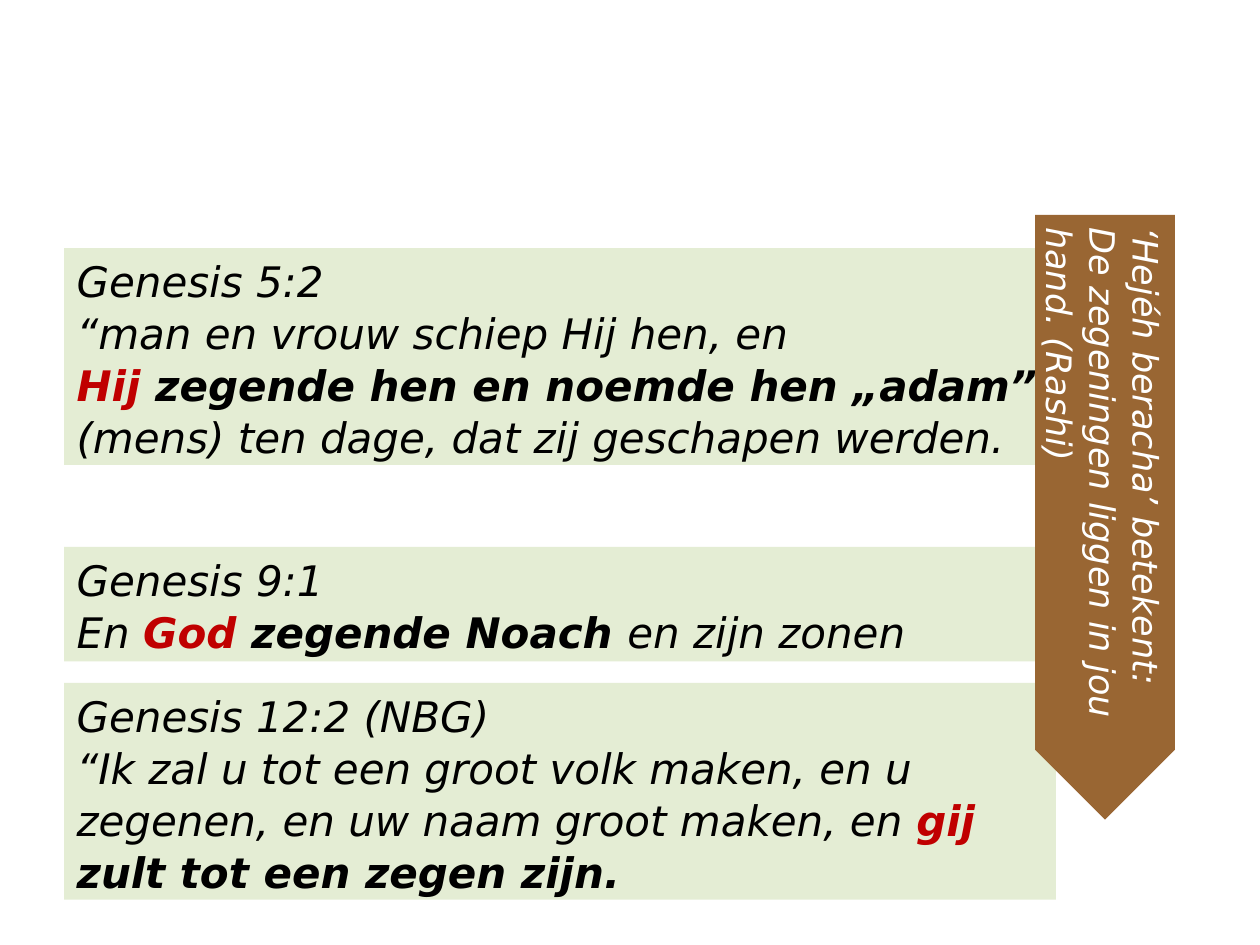
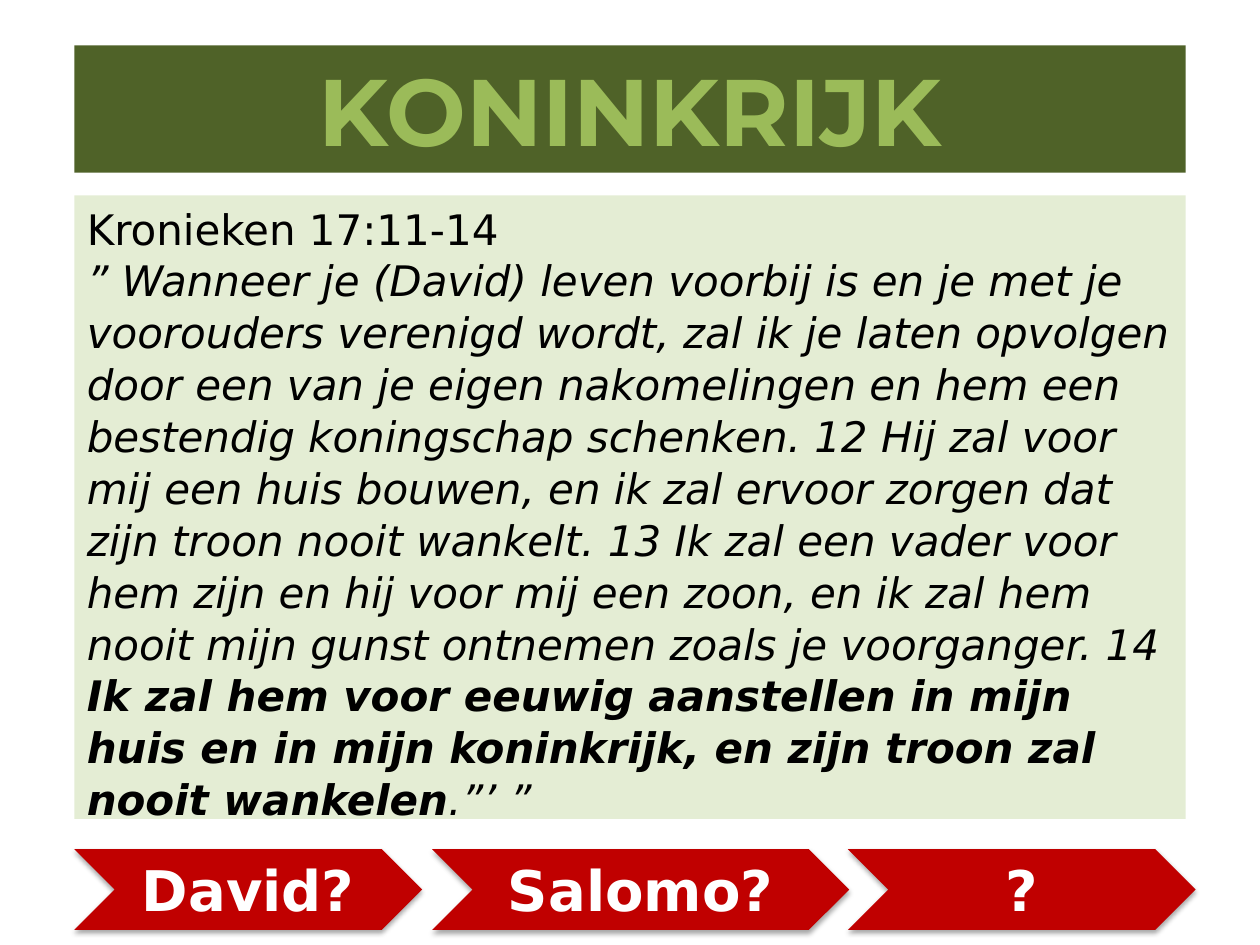
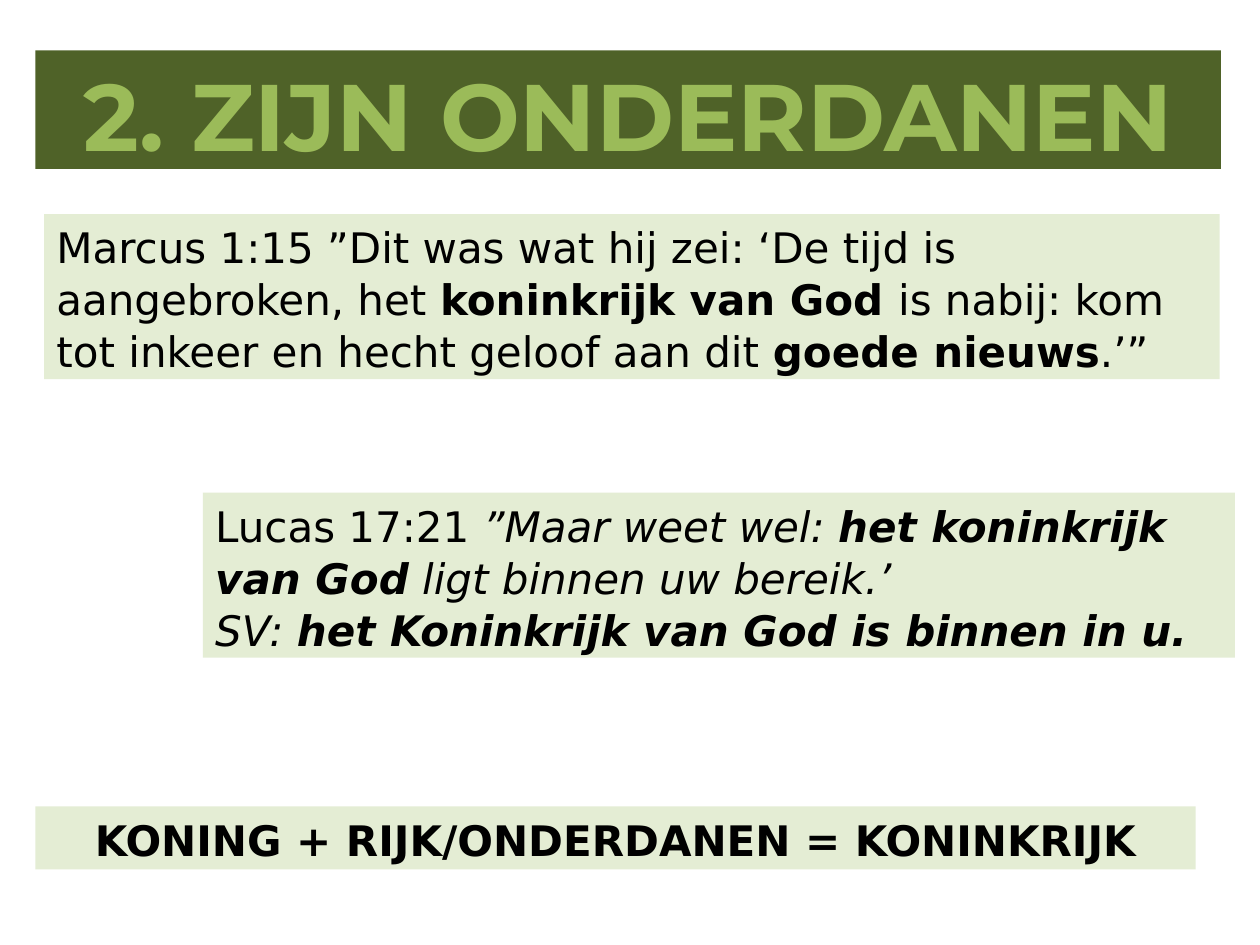
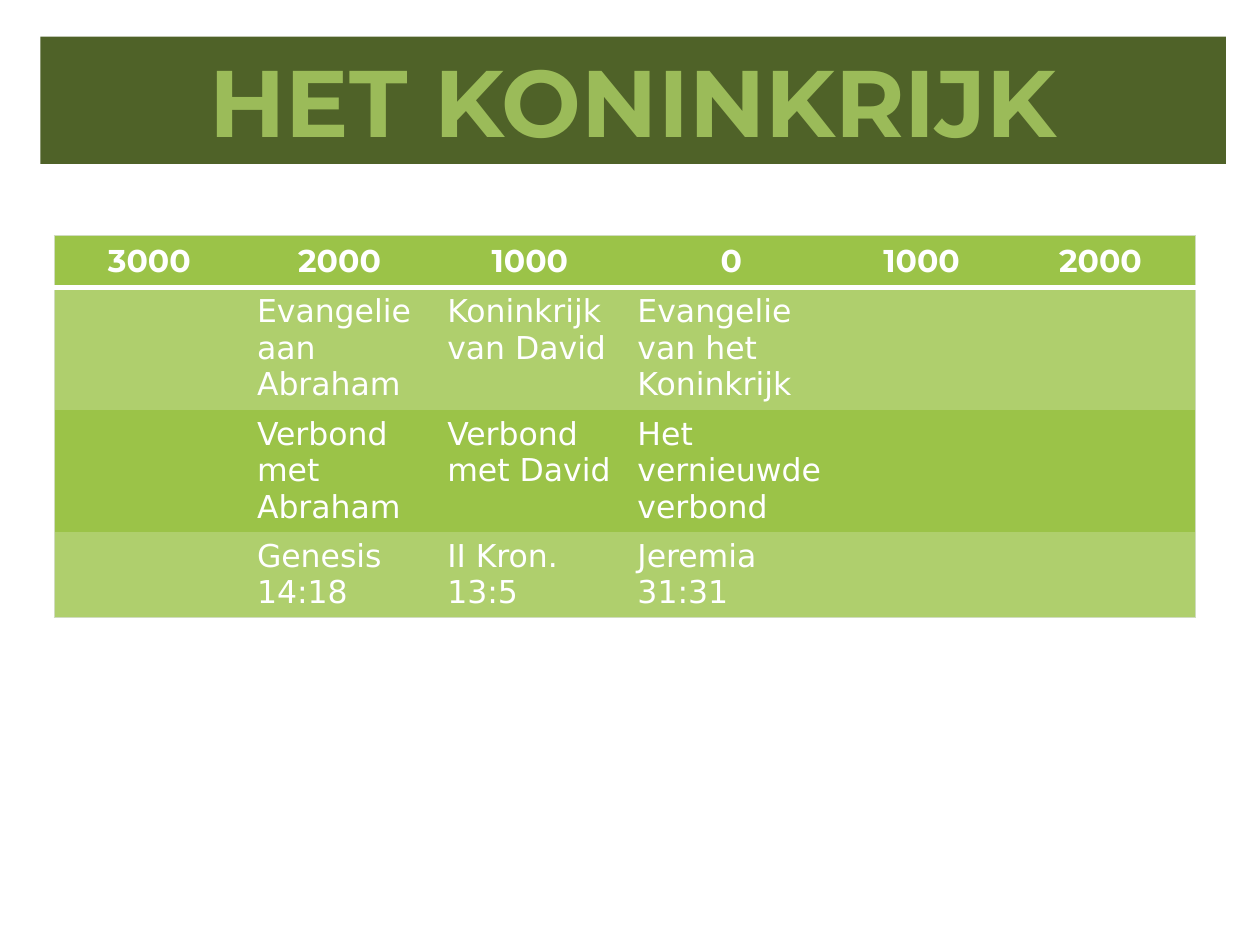
from lxml import etree
from pptx import Presentation
from pptx.dml.color import RGBColor
from pptx.enum.shapes import MSO_SHAPE as Shape
from pptx.enum.text import MSO_ANCHOR as Anchor, MSO_AUTO_SIZE as Fit, PP_ALIGN as Align
from pptx.oxml.ns import qn
from pptx.util import Inches, Pt

# Shared style
HEX = {
    "band": "4F6228", "title": "9BBB59", "pale": "D7E4BD", "red": "C00000",
    "brown": "996633", "black": "000000", "white": "FFFFFF",
    "row": "9BC348", "stripe": "AFCF6D", "edge": "D0DCBF",
}
HEAD, BODY = "Montserrat", "DejaVu Sans"
NO_GRID = "{2D5ABB26-0587-4C30-8999-92F81FD0307C}"
TITLE_ONLY, BLANK = 5, 6
LEADING = 1.03


def rgb(name):
    return RGBColor.from_string(HEX[name])


def sub(node, tag, **attrs):
    return etree.SubElement(node, qn(tag), {k: str(v) for k, v in attrs.items()})


def tint(node, name, alpha=None):
    """Add a colour, with an opacity in percent if given."""
    color = sub(node, "a:srgbClr", val=HEX[name])
    if alpha:
        sub(color, "a:alpha", val=alpha * 1000)


class Deck:
    def __init__(self):
        self.prs = Presentation()
        self.prs.slide_width, self.prs.slide_height = Inches(10), Inches(7.5)
        self.slide = None

    def page(self, layout=BLANK):
        self.slide = self.prs.slides.add_slide(self.prs.slide_layouts[layout])

    def text(self, frame, paras, size, color="black", font=BODY, align=Align.LEFT,
             leading=None):
        """Each paragraph is a list of (words, style); b, i and r mean bold, italic, red."""
        frame.word_wrap = True
        for n, runs in enumerate(paras):
            para = frame.add_paragraph() if n else frame.paragraphs[0]
            para.alignment = align
            if leading:
                para.line_spacing = leading
            for words, style in runs:
                run = para.add_run()
                run.text = words
                face = run.font
                face.name, face.size = font, Pt(size)
                face.bold, face.italic = "b" in style, "i" in style
                face.color.rgb = rgb("red" if "r" in style else color)

    def label(self, item, paras, size, color="black", **look):
        frame = item.text_frame
        frame.auto_size, frame.vertical_anchor = Fit.NONE, Anchor.TOP
        self.text(frame, paras, size, color, **look)

    def title(self, words, left, top, width, height):
        self.page(TITLE_ONLY)
        band = self.slide.shapes.title
        band.left, band.top = Inches(left), Inches(top)
        band.width, band.height = Inches(width), Inches(height)
        band.fill.solid()
        band.fill.fore_color.rgb = rgb("band")
        self.label(band, [[(words, "b")]], 54, "title", font=HEAD, align=Align.CENTER)

    def shape(self, kind, box, fill):
        item = self.slide.shapes.add_shape(kind, *map(Inches, box))
        item.shadow.inherit = False
        item.fill.solid()
        item.fill.fore_color.rgb = rgb(fill)
        item.line.fill.background()
        return item

    def verse(self, box, *paras, align=Align.LEFT):
        item = self.shape(Shape.RECTANGLE, box, "pale")
        color = item._element.spPr.find(qn("a:solidFill"))[0]
        sub(color, "a:alpha", val=65000)
        self.label(item, paras, 24, align=align, leading=LEADING)

    def plate(self, box, *paras):
        item = self.shape(Shape.PENTAGON, box, "brown")
        item.rotation = 90
        self.label(item, paras, 20, "white", leading=LEADING)

    def step(self, words, left, width):
        item = self.shape(Shape.CHEVRON, (left, 6.74, width, 0.64), "red")
        glow = sub(item._element.spPr.find(qn("a:effectLst")), "a:outerShdw",
                   blurRad=Pt(3.1), dist=Pt(1.8), dir=90 * 60000, rotWithShape=0)
        tint(glow, "black", 35)
        self.label(item, [[(words, "b")]], 32, "white", align=Align.CENTER)

    def edge(self, cell, side, color, width):
        line = sub(cell._tc.get_or_add_tcPr(), "a:ln" + side, w=Pt(width))
        tint(sub(line, "a:solidFill"), color)

    def table(self, rows, left, top, widths, heights):
        frame = self.slide.shapes.add_table(
            len(rows), len(widths), Inches(left), Inches(top),
            Inches(sum(widths)), Inches(sum(heights)))
        grid = frame.table
        grid._tbl.tblPr.find(qn("a:tableStyleId")).text = NO_GRID
        grid.first_row = grid.horz_banding = False
        for col, width in zip(grid.columns, widths):
            col.width = Inches(width)
        for row, height in zip(grid.rows, heights):
            row.height = Inches(height)
        end, last = len(rows) - 1, len(widths) - 1
        for r, texts in enumerate(rows):
            font, align = (BODY, Align.LEFT) if r else (HEAD, Align.CENTER)
            for c, words in enumerate(texts):
                cell = grid.cell(r, c)
                # Borders go in the order left, right, top, bottom
                for side, here in (("L", c == 0), ("R", c == last),
                                   ("T", r == 0), ("B", r == end)):
                    if here:
                        self.edge(cell, side, "edge", 0.75)
                if r == 0:
                    self.edge(cell, "B", "white", 3)
                cell.fill.solid()
                cell.fill.fore_color.rgb = rgb("stripe" if r % 2 else "row")
                if words:
                    style = "" if r else "b"
                    self.text(cell.text_frame, [[(words, style)]], 18, "white",
                              font, align)


def bless(deck):
    deck.page()
    left, width = 0.51, 7.87
    deck.verse((left, 1.97, width, 1.72),
               [("Genesis 5:2", "i")],
               [("“man en vrouw schiep Hij hen, en", "i")],
               [("Hij ", "bir"), ("zegende hen en noemde hen „adam” ", "bi"),
                ("(mens) ten dage, dat zij geschapen werden.", "i")])
    deck.verse((left, 4.34, width, 0.91),
               [("Genesis 9:1", "i")],
               [("En ", "i"), ("God ", "bir"), ("zegende Noach ", "bi"),
                ("en zijn zonen", "i")])
    deck.verse((left, 5.42, width, 1.72),
               [("Genesis 12:2 (NBG)", "i")],
               [("“Ik zal u tot een groot volk maken, en u zegenen, "
                 "en uw naam groot maken, en ", "i"),
                ("gij ", "bir"), ("zult tot een zegen zijn.", "bi")])
    deck.plate((6.37, 3.55, 4.8, 1.11),
               [("‘Hejéh beracha’ betekent:", "i")],
               [("De zegeningen liggen in jou hand. (Rashi)", "i")])


def realm(deck):
    left, width = 0.59, 8.82
    deck.title("KONINKRIJK", left, 0.36, width, 1.01)
    deck.verse((left, 1.55, width, 4.95),
               [("Kronieken 17:11-14", "")],
               [("” Wanneer je (David) leven voorbij is en je met je voorouders "
                 "verenigd wordt, zal ik je laten opvolgen door een van je eigen "
                 "nakomelingen en hem een bestendig koningschap schenken. "
                 "12 Hij zal voor mij een huis bouwen, en ik zal ervoor zorgen dat "
                 "zijn troon nooit wankelt. 13 Ik zal een vader voor hem zijn en hij "
                 "voor mij een zoon, en ik zal hem nooit mijn gunst ontnemen zoals "
                 "je voorganger. 14 ", "i"),
                ("Ik zal hem voor eeuwig aanstellen in mijn huis en in mijn "
                 "koninkrijk, en zijn troon zal nooit wankelen", "bi"),
                (".”’ ”", "i")])
    for words, x, wide in (("David?", left, 2.76), ("Salomo?", 3.43, 3.31),
                           ("?", 6.73, 2.76)):
        deck.step(words, x, wide)


def people(deck):
    deck.title("2. ZIJN ONDERDANEN", 0.28, 0.4, 9.41, 0.94)
    deck.verse((0.35, 1.7, 9.33, 1.31),
               [("Marcus 1:15 ”Dit was wat hij zei: ‘De tijd is aangebroken, het ", ""),
                ("koninkrijk van God ", "b"),
                ("is nabij: kom tot inkeer en hecht geloof aan dit ", ""),
                ("goede nieuws", "b"), (".’”", "")])
    deck.verse((1.61, 3.91, 8.19, 1.31),
               [("Lucas 17:21 ", ""), ("”Maar weet wel: ", "i"),
                ("het koninkrijk van God", "bi"), (" ligt binnen uw bereik.’", "i")],
               [("SV: ", "i"), ("het Koninkrijk van God is binnen in u.", "bi")])
    deck.verse((0.28, 6.4, 9.21, 0.5),
               [("KONING + RIJK/ONDERDANEN = KONINKRIJK", "b")], align=Align.CENTER)


def ages(deck):
    deck.title("HET KONINKRIJK", 0.32, 0.29, 9.41, 1.01)
    rows = [
        ("3000", "2000", "1000", "0", "1000", "2000"),
        ("", "Evangelie aan Abraham", "Koninkrijk van David",
         "Evangelie van het Koninkrijk", "", ""),
        ("", "Verbond met Abraham", "Verbond met David",
         "Het vernieuwde verbond", "", ""),
        ("", "Genesis 14:18", "II Kron. 13:5", "Jeremia 31:31", "", ""),
    ]
    deck.table(rows, 0.43, 1.87, (1.51, 1.51, 1.51, 1.69, 1.33, 1.51),
               (0.41, 0.97, 0.97, 0.68))


def main():
    deck = Deck()
    for build in (bless, realm, people, ages):
        build(deck)
    deck.prs.save("out.pptx")


if __name__ == "__main__":
    main()
